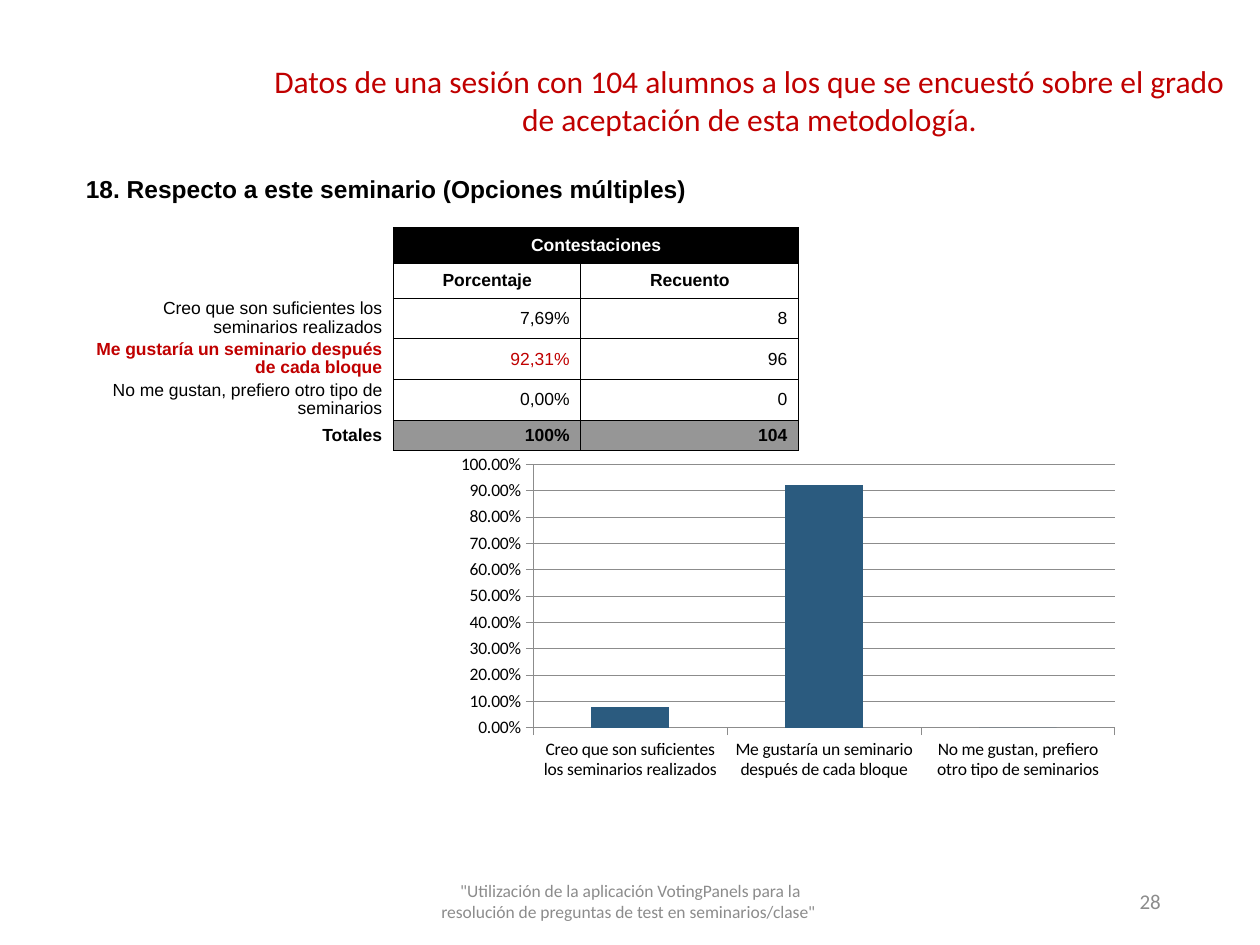
from lxml.etree import SubElement
from pptx import Presentation
from pptx.chart.data import CategoryChartData
from pptx.dml.color import RGBColor
from pptx.enum.chart import XL_CHART_TYPE, XL_TICK_MARK
from pptx.enum.text import MSO_ANCHOR, MSO_AUTO_SIZE, PP_ALIGN
from pptx.oxml import parse_xml
from pptx.oxml.ns import nsdecls, qn
from pptx.util import Cm, Pt

BLACK = RGBColor(0x00, 0x00, 0x00)
WHITE = RGBColor(0xFF, 0xFF, 0xFF)
RED = RGBColor(0xC0, 0x00, 0x00)
GREY = RGBColor(0x8C, 0x8C, 0x8C)
TOTAL_GREY = RGBColor(0x96, 0x96, 0x96)
BLUE = RGBColor(0x2B, 0x5B, 0x7F)

COLUMN_WIDTHS = (6.43, 3.3, 0.48, 4.39)
ROW_HEIGHTS = (1.19, 0.48, 0.71, 0.71, 0.82, 0.82, 0.82, 0.61)
FIRST_GRID_ROW = 2
FIRST_ANSWER_ROW = 4
ANSWERS = (
    ("Creo que son suficientes los seminarios realizados", "7,69%", "8", 0.08),
    ("Me gustaría un seminario después de cada bloque", "92,31%", "96", 0.92),
    ("No me gustan, prefiero otro tipo de seminarios", "0,00%", "0", 0),
)
FAVOURITE = 1


def write(frame, text, size, color, align, font="Calibri", bold=False):
    """Fill the first paragraph of a text frame with one formatted run."""
    para = frame.paragraphs[0]
    para.alignment = align
    span = para.add_run()
    span.text = text
    span.font.name = font
    span.font.size = Pt(size)
    span.font.bold = bold
    span.font.color.rgb = color


def add_title(page, text):
    """Move the title placeholder to the top right and write it."""
    title = page.shapes.title
    title.left, title.top, title.width, title.height = Cm(5.2), Cm(1.12), Cm(19.82), Cm(1.8)
    frame = title.text_frame
    frame.word_wrap = True
    frame.auto_size = MSO_AUTO_SIZE.SHAPE_TO_FIT_TEXT
    frame.vertical_anchor = MSO_ANCHOR.TOP
    write(frame, text, 18, RED, PP_ALIGN.CENTER)


def add_footer(page, text, left, width, size, align):
    """Add a grey text box on the footer line."""
    box = page.shapes.add_textbox(Cm(left), Cm(17.65), Cm(width), Cm(1.02))
    frame = box.text_frame
    frame.word_wrap = True
    frame.vertical_anchor = MSO_ANCHOR.MIDDLE
    write(frame, text, size, GREY, align)


def set_borders(cell, sides):
    """Draw thin black lines on the named sides and none on the others."""
    properties = cell._tc.get_or_add_tcPr()
    for side in "LRTB":
        line = SubElement(properties, qn(f"a:ln{side}"), w=str(Pt(0.5)))
        if side in sides:
            fill = SubElement(line, qn("a:solidFill"))
            SubElement(fill, qn("a:srgbClr"), val=str(BLACK))
        else:
            SubElement(line, qn("a:noFill"))


def style_cell(cell, row, column):
    """Set borders, fill and margins from the position of a cell."""
    in_grid = row >= FIRST_GRID_ROW
    if in_grid:
        set_borders(cell, "LRTB" if column else "R")
    else:
        set_borders(cell, "B" if row == 1 and column else "")
    cell.fill.background()
    if in_grid:
        cell.fill.solid()
        cell.fill.fore_color.rgb = WHITE
        if column and row == FIRST_GRID_ROW:
            cell.fill.fore_color.rgb = BLACK
        elif column and row == len(ROW_HEIGHTS) - 1:
            cell.fill.fore_color.rgb = TOTAL_GREY
    cell.margin_left = cell.margin_right = Cm(0.03)
    cell.margin_top = cell.margin_bottom = Cm(0)
    cell.vertical_anchor = MSO_ANCHOR.MIDDLE
    cell.text_frame.paragraphs[0]._p.get_or_add_endParaRPr().set("sz", "800")


def write_cell(cell, text, size=10, color=BLACK, align=PP_ALIGN.RIGHT, bold=True):
    """Write Arial text in a table cell, inset on its aligned side."""
    if align == PP_ALIGN.RIGHT:
        cell.margin_right = Cm(0.23)
    elif align == PP_ALIGN.LEFT:
        cell.margin_left = Cm(0.23)
    write(cell.text_frame, text, size, color, align, "Arial", bold)


def add_answer_table(page):
    """Add the table of answers with its heading and totals."""
    frame = page.shapes.add_table(len(ROW_HEIGHTS), len(COLUMN_WIDTHS), Cm(1.5), Cm(2.92),
                                  Cm(sum(COLUMN_WIDTHS)), Cm(sum(ROW_HEIGHTS)))
    table = frame.table
    table.first_row = table.horz_banding = False
    for column, width in zip(table.columns, COLUMN_WIDTHS):
        column.width = Cm(width)
    for index, height in enumerate(ROW_HEIGHTS):
        table.rows[index].height = Cm(height)
        for column in range(len(COLUMN_WIDTHS)):
            style_cell(table.cell(index, column), index, column)

    table.cell(0, 0).merge(table.cell(0, 3))
    table.cell(1, 2).merge(table.cell(1, 3))
    table.cell(2, 1).merge(table.cell(2, 3))
    for row in range(3, len(ROW_HEIGHTS)):
        table.cell(row, 1).merge(table.cell(row, 2))

    table.cell(0, 0).vertical_anchor = MSO_ANCHOR.BOTTOM
    write_cell(table.cell(0, 0), "18. Respecto a este seminario (Opciones múltiples)", 14,
               align=PP_ALIGN.LEFT)
    write_cell(table.cell(2, 1), "Contestaciones", color=WHITE, align=PP_ALIGN.CENTER)
    for column, heading in ((1, "Porcentaje"), (3, "Recuento")):
        write_cell(table.cell(3, column), heading, align=PP_ALIGN.CENTER)
    for index, (label, percentage, count, _) in enumerate(ANSWERS):
        row = FIRST_ANSWER_ROW + index
        favourite = index == FAVOURITE
        color = RED if favourite else BLACK
        write_cell(table.cell(row, 0), label, color=color, bold=favourite)
        table.cell(row, 0).text_frame.paragraphs[0].line_spacing = 0.95
        write_cell(table.cell(row, 1), percentage, color=color, bold=False)
        write_cell(table.cell(row, 3), count, bold=False)
    for column, text in ((0, "Totales"), (1, "100%"), (3, "104")):
        write_cell(table.cell(len(ROW_HEIGHTS) - 1, column), text)


def set_plot_layout(chart, left, top, width, height):
    """Fix the inner plot area as fractions of the chart."""
    area = chart._chartSpace.chart.plotArea
    for old in area.findall(qn("c:layout")):
        area.remove(old)
    values = "".join(f'<c:{name} val="{value}"/>' for name, value in
                     (("x", left), ("y", top), ("w", width), ("h", height)))
    area.insert(0, parse_xml(
        f'<c:layout {nsdecls("c")}><c:manualLayout><c:layoutTarget val="inner"/>'
        f'<c:xMode val="edge"/><c:yMode val="edge"/>{values}</c:manualLayout></c:layout>'))


def add_answer_chart(page):
    """Add the column chart of answer percentages."""
    data = CategoryChartData(number_format="0.00%")
    data.categories = [answer[0] for answer in ANSWERS]
    data.add_series("Series 1", [answer[3] for answer in ANSWERS])
    chart = page.shapes.add_chart(XL_CHART_TYPE.COLUMN_CLUSTERED, Cm(8.55), Cm(8.94),
                                  Cm(14.66), Cm(8.43), data).chart
    chart.has_legend = chart.has_title = False
    chart.font.name = "Calibri"
    chart.font.size = Pt(10)
    chart.font.color.rgb = BLACK
    plot = chart.plots[0]
    plot.gap_width = 150
    plot.vary_by_categories = False
    fill = plot.series[0].format.fill
    fill.solid()
    fill.fore_color.rgb = BLUE
    values = chart.value_axis
    values.minimum_scale, values.maximum_scale, values.major_unit = 0, 1, 0.1
    values.tick_labels.number_format = "0.00%"
    values.tick_labels.number_format_is_linked = False
    for axis in (values, chart.category_axis):
        axis.major_tick_mark = XL_TICK_MARK.OUTSIDE
    for part in (values, chart.category_axis, values.major_gridlines):
        part.format.line.color.rgb = GREY
        part.format.line.width = Pt(0.5)
    set_plot_layout(chart, 0.15, 0.05, 0.8, 0.63)


def main():
    """Build the slide and save the deck."""
    deck = Presentation()
    deck.slide_width, deck.slide_height = Cm(25.4), Cm(19.05)
    page = deck.slides.add_slide(deck.slide_layouts[5])
    add_title(page, "Datos de una sesión con 104 alumnos a los que se encuestó sobre el grado "
                    "de aceptación de esta metodología.")
    add_footer(page, '"Utilización de la aplicación VotingPanels para la resolución de preguntas '
                     'de test en seminarios/clase" ', 8.41, 8.59, 10, PP_ALIGN.CENTER)
    add_footer(page, "28", 17.93, 5.72, 12, PP_ALIGN.RIGHT)
    add_answer_chart(page)
    add_answer_table(page)
    deck.save("out.pptx")


if __name__ == "__main__":
    main()
